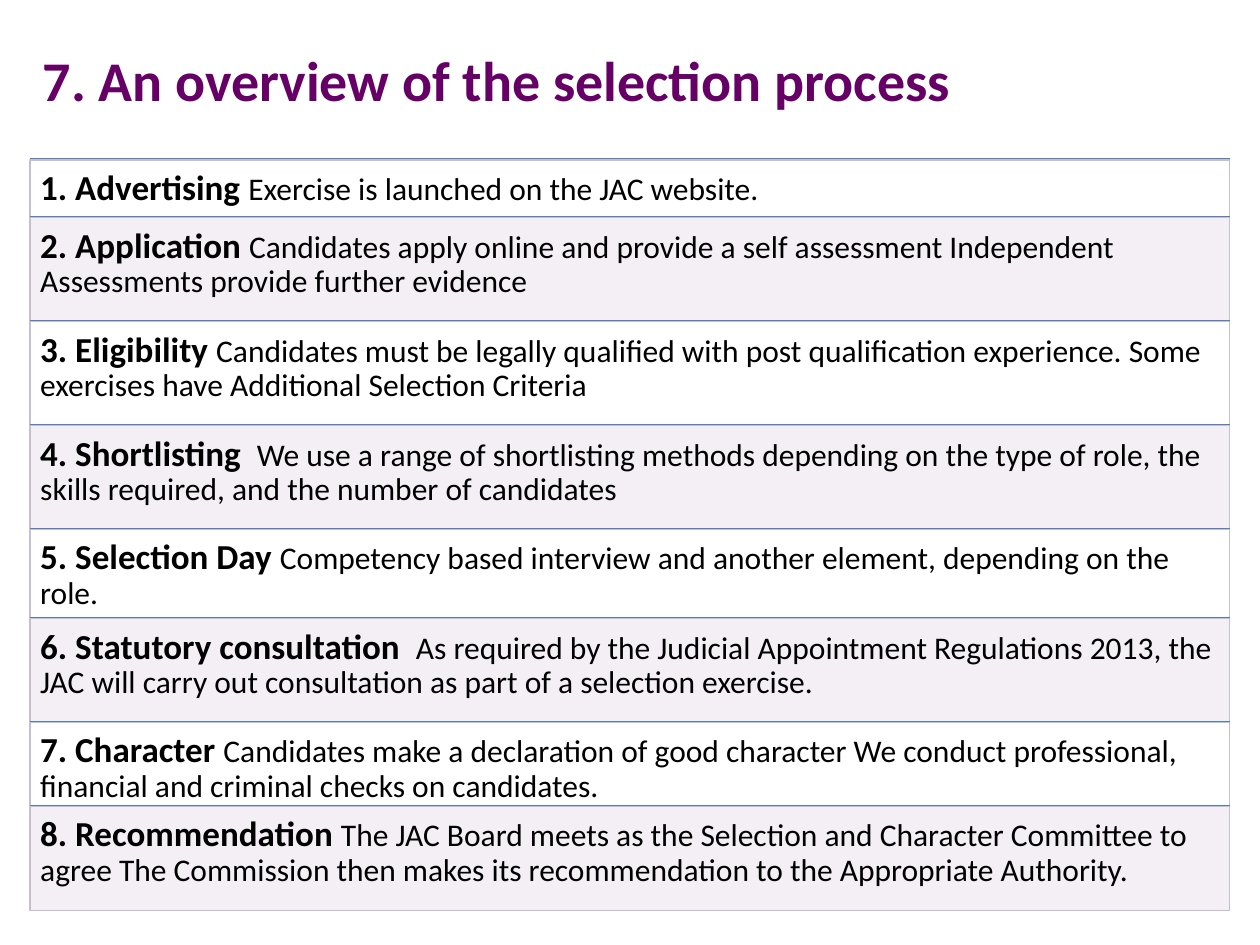
from lxml import etree
from pptx import Presentation
from pptx.dml.color import RGBColor
from pptx.enum.shapes import MSO_CONNECTOR, MSO_SHAPE
from pptx.enum.text import MSO_ANCHOR, PP_ALIGN
from pptx.oxml.ns import qn
from pptx.util import Pt

LEFT = PP_ALIGN.LEFT
TOP, MIDDLE = MSO_ANCHOR.TOP, MSO_ANCHOR.MIDDLE
RECT = MSO_SHAPE.RECTANGLE
STRAIGHT = MSO_CONNECTOR.STRAIGHT

BLACK = RGBColor(0x00, 0x00, 0x00)
WHITE = RGBColor(0xFF, 0xFF, 0xFF)
PURPLE = RGBColor(0x66, 0x00, 0x66)
LILAC = RGBColor(0xF3, 0xEF, 0xF5)
MAUVE = RGBColor(0xC7, 0xBE, 0xD4)
BLUE = RGBColor(0x4F, 0x81, 0xBD)

EDGE, WIDTH, START = 17.2, 685.6, 91.4
SHORT, TALL = 33, 59.4

STEPS = [
    (SHORT, "1. Advertising ", "Exercise is launched on the JAC website."),
    (TALL, "2. Application ",
     "Candidates apply online and provide a self assessment Independent "
     "Assessments provide further evidence"),
    (TALL, "3. Eligibility ",
     "Candidates must be legally qualified with post qualification experience. "
     "Some exercises have Additional Selection Criteria"),
    (TALL, "4. Shortlisting  ",
     "We use a range of shortlisting methods depending on the type of role, "
     "the skills required, and the number of candidates"),
    (50.9, "5. Selection Day ",
     "Competency based interview and another element, depending on the role."),
    (TALL, "6. Statutory consultation  ",
     "As required by the Judicial Appointment Regulations 2013, the JAC will "
     "carry out consultation as part of a selection exercise."),
    (48, "7. Character ",
     "Candidates make a declaration of good character We conduct professional, "
     "financial and criminal checks on candidates."),
    (TALL, "8. Recommendation ",
     "The JAC Board meets as the Selection and Character Committee to agree "
     "The Commission then makes its recommendation to the Appropriate Authority."),
]


def assign(item, values):
    for name, value in values.items():
        setattr(item, name, value)


class Deck:
    face = "Calibri"
    inset = Pt(5.8)

    def __init__(self, slide):
        self.slide = slide

    def words(self, para, text, size, color, bold):
        run = para.add_run()
        run.text = text
        assign(run.font, {"name": self.face, "size": Pt(size), "bold": bold})
        run.font.color.rgb = color

    def title(self, text, left, top, width, height):
        shape = self.slide.shapes.title
        assign(shape, {"left": Pt(left), "top": Pt(top),
                       "width": Pt(width), "height": Pt(height)})
        frame = shape.text_frame
        frame.vertical_anchor = MIDDLE
        para = frame.paragraphs[0]
        para.alignment = LEFT
        self.words(para, text, 32, PURPLE, True)

    def rule(self, left, top, width):
        line = self.slide.shapes.add_connector(
            STRAIGHT, Pt(left), Pt(top), Pt(left + width), Pt(top))
        line.line.color.rgb = BLUE
        line.line.width = Pt(2)
        etree.SubElement(line._element.spPr, qn("a:effectLst"))

    def step(self, head, body, left, top, width, height, fill):
        box = self.slide.shapes.add_shape(
            RECT, Pt(left), Pt(top), Pt(width), Pt(height))
        box.shadow.inherit = False
        box.fill.solid()
        box.fill.fore_color.rgb = fill
        box.line.color.rgb = MAUVE
        box.line.width = Pt(0.75)
        frame = box.text_frame
        assign(frame, {"word_wrap": True, "vertical_anchor": TOP,
                       "margin_left": self.inset, "margin_right": self.inset,
                       "margin_top": self.inset, "margin_bottom": self.inset})
        para = frame.paragraphs[0]
        assign(para, {"alignment": LEFT, "line_spacing": 0.9})
        self.words(para, head, 20, BLACK, True)
        self.words(para, body, 18, BLACK, False)


def main():
    show = Presentation()
    assign(show, {"slide_width": Pt(720), "slide_height": Pt(540)})
    deck = Deck(show.slides.add_slide(show.slide_layouts[5]))
    deck.title("7. An overview of the selection process", EDGE, -0.7, 702.8, 92.1)
    top = START
    for index, (height, head, body) in enumerate(STEPS):
        deck.rule(EDGE, top, WIDTH)
        fill = LILAC if index % 2 else WHITE
        deck.step(head, body, EDGE, top, WIDTH, height, fill)
        top += height
    show.save("out.pptx")


if __name__ == "__main__":
    main()
